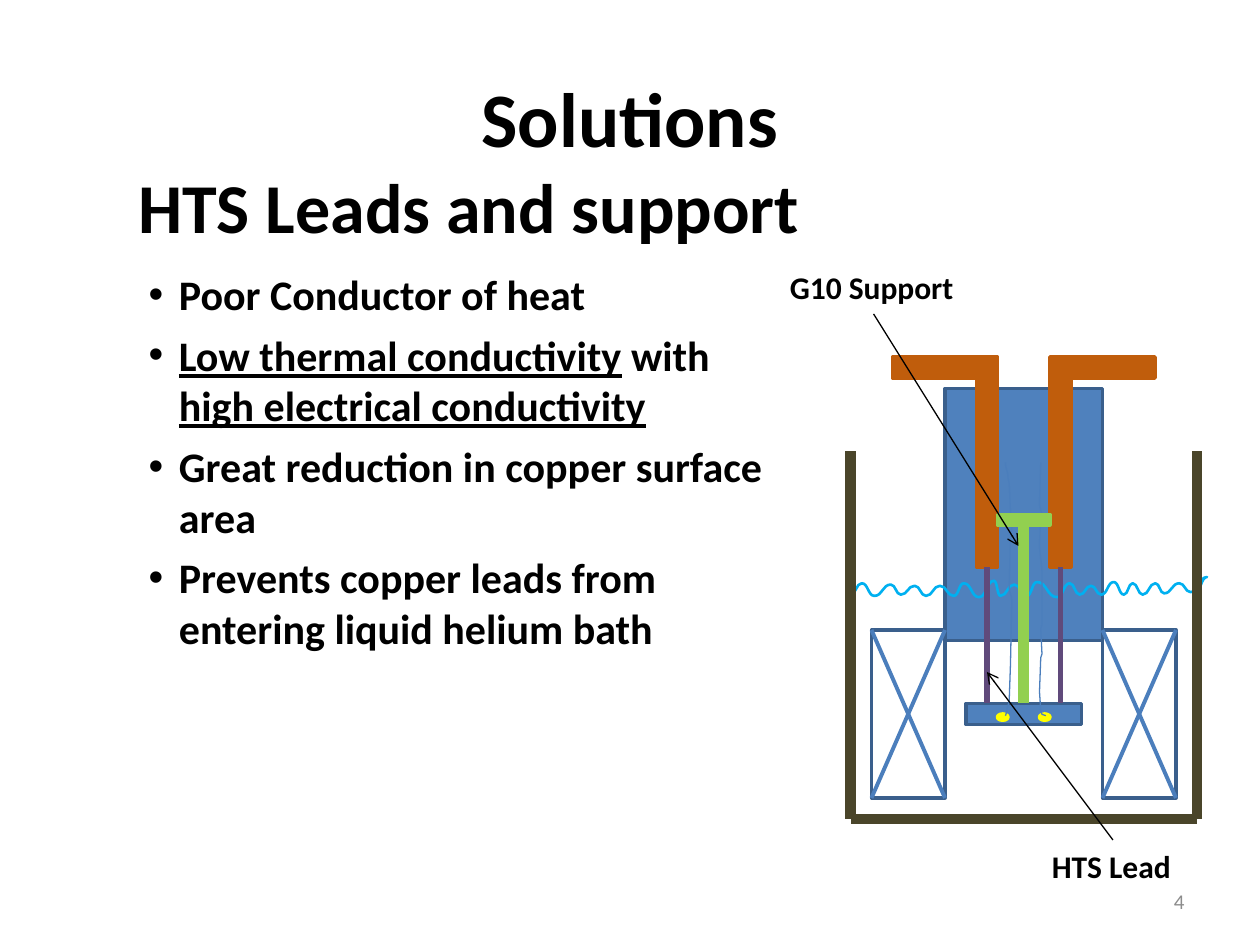
"""Build the Solutions slide: HTS lead bullets beside a cryostat diagram."""
from lxml import etree
from pptx import Presentation
from pptx.dml.color import RGBColor
from pptx.enum.shapes import MSO_CONNECTOR, MSO_SHAPE
from pptx.enum.text import MSO_ANCHOR, MSO_AUTO_SIZE, PP_ALIGN
from pptx.oxml.ns import qn
from pptx.util import Inches, Pt

RECT, OVAL, STRAIGHT = MSO_SHAPE.RECTANGLE, MSO_SHAPE.OVAL, MSO_CONNECTOR.STRAIGHT
CENTER, RIGHT = PP_ALIGN.CENTER, PP_ALIGN.RIGHT
MIDDLE, GROW = MSO_ANCHOR.MIDDLE, MSO_AUTO_SIZE.SHAPE_TO_FIT_TEXT

BLACK = RGBColor(0x00, 0x00, 0x00)
WHITE = RGBColor(0xFF, 0xFF, 0xFF)
GRAY = RGBColor(0x8C, 0x8C, 0x8C)
BLUE = RGBColor(0x4F, 0x81, 0xBD)
EDGE = RGBColor(0x3A, 0x5F, 0x8C)
WIRE = RGBColor(0x4B, 0x7E, 0xBC)
WATER = RGBColor(0x00, 0xB0, 0xF0)
COPPER = RGBColor(0xC0, 0x5D, 0x0C)
YELLOW = RGBColor(0xFF, 0xFF, 0x00)
WALL = RGBColor(0x4A, 0x45, 0x2A)
PURPLE = RGBColor(0x60, 0x4A, 0x7B)
GREEN = RGBColor(0x92, 0xD0, 0x50)

UNIT = Inches(1) // 12

TITLE = "Solutions"
HEADING = "HTS Leads and support"
BULLETS = [
    [("Poor Conductor of heat", False)],
    [("Low thermal conductivity", True), (" with ", False), ("high electrical conductivity", True)],
    [("Great reduction in copper surface area", False)],
    [("Prevents copper leads from entering liquid helium bath", False)],
]
LABELS = [
    ("G10 Support", (6.17, 2.08, 1.53, 0.4)),
    ("HTS Lead", (8.25, 6.67, 1.15, 0.4)),
]
PAGE, PAGE_BOX = "4", (7.17, 6.95, 2.33, 0.4)
CRESTS = [
    (6.75, 4.72), (6.84, 4.63), (6.94, 4.73), (7.07, 4.64), (7.15, 4.72), (7.26, 4.65),
    (7.35, 4.73), (7.46, 4.65), (7.57, 4.73), (7.65, 4.63), (7.77, 4.74), (7.89, 4.61),
    (7.94, 4.73), (8.05, 4.64), (8.15, 4.73), (8.23, 4.62), (8.39, 4.74), (8.49, 4.63),
    (8.57, 4.72), (8.66, 4.65), (8.74, 4.72), (8.84, 4.62), (8.92, 4.72), (8.99, 4.63),
    (9.07, 4.72), (9.17, 4.63), (9.24, 4.71), (9.36, 4.63), (9.45, 4.7), (9.58, 4.58),
    (9.48, 4.71),
]
WIRES = [
    [(7.98, 5.68), (7.99, 5.65), (8.01, 5.55), (8.02, 5.27), (8.03, 4.77), (8.01, 4.66),
     (8.02, 4.23), (8.03, 4.2), (8.02, 4.06), (8.01, 3.84), (8, 3.79), (7.98, 3.67)],
    [(8.3, 5.68), (8.27, 5.67), (8.26, 5.64), (8.25, 5.49), (8.26, 5.22), (8.27, 5.19),
     (8.26, 4.99), (8.27, 4.96), (8.27, 4.57), (8.25, 4.3), (8.26, 4.14), (8.27, 4.11),
     (8.25, 3.99), (8.26, 3.67)],
]
COIL_LEFTS, COIL_TOP, COIL_W, COIL_H = (83, 105), 60, 7, 16
WALL_LEFT, WALL_RIGHT, WALL_TOP, FLOOR = 81, 114, 43, 78
FLOOR_PARTS = [(82, WALL_RIGHT), (84, WALL_LEFT)]
ARROWS = [(106, 80, 94, 64), (83.2, 29.9, 97, 52)]


def write(p, text, size, bold=True, color=BLACK, underline=False):
    r = p.add_run()
    r.text = text
    fmt = {"name": "Calibri", "size": Pt(size), "bold": bold, "underline": underline}
    for key, value in fmt.items():
        setattr(r.font, key, value)
    r.font.color.rgb = color


def place(sp, left, top, width, height):
    box = {"left": left, "top": top, "width": width, "height": height}
    for key, value in box.items():
        setattr(sp, key, Inches(value))


def indent(p, margin, bullet):
    pPr = p._p.get_or_add_pPr()
    pPr.set("marL", str(Inches(margin)))
    pPr.set("indent", str(-Inches(margin)))
    if bullet:
        etree.SubElement(pPr, qn("a:buChar"), char=bullet)
    else:
        etree.SubElement(pPr, qn("a:buNone"))


def add_block(s, left, top, width, height, fill, line, kind=RECT):
    sp = s.shapes.add_shape(kind, *(round(v * UNIT) for v in (left, top, width, height)))
    sp.shadow.inherit = False
    sp.fill.solid()
    sp.fill.fore_color.rgb = fill
    sp.line.color.rgb = line
    sp.line.width = Pt(2)
    return sp


def add_line(s, x1, y1, x2, y2, color, width, arrow=False):
    c = s.shapes.add_connector(STRAIGHT, *(round(v * UNIT) for v in (x1, y1, x2, y2)))
    c.line.color.rgb = color
    c.line.width = Pt(width)
    if arrow:
        etree.SubElement(c.line._get_or_add_ln(), qn("a:tailEnd"), type="arrow")
    etree.SubElement(c._element.spPr, qn("a:effectLst"))
    return c


def bend(sp, upright):
    """Turn each straight segment into an S-curve along the given direction."""
    pts = [(int(pt.get("x")), int(pt.get("y"))) for pt in sp._element.iter(qn("a:pt"))]
    segments = list(sp._element.iter(qn("a:lnTo")))
    for seg, (x1, y1), (x2, y2) in zip(segments, pts, pts[1:]):
        xm, ym = (x1 + x2) // 2, (y1 + y2) // 2
        handles = [(x1, ym), (x2, ym)] if upright else [(xm, y1), (xm, y2)]
        curve = etree.Element(qn("a:cubicBezTo"))
        for x, y in handles + [(x2, y2)]:
            etree.SubElement(curve, qn("a:pt"), x=str(x), y=str(y))
        seg.getparent().replace(seg, curve)


def add_curve(s, points, color, width, upright=False):
    points = [(Inches(x), Inches(y)) for x, y in points]
    builder = s.shapes.build_freeform(*points[0], scale=1.0)
    builder.add_line_segments(points[1:], close=False)
    sp = builder.convert_to_shape()
    bend(sp, upright)
    sp.shadow.inherit = False
    sp.fill.background()
    sp.line.color.rgb = color
    sp.line.width = Pt(width)


def add_text(s):
    title, heading, bullets = list(s.placeholders)[:3]
    place(title, 0.5, 0.3, 9, 1.25)
    title.text_frame.vertical_anchor = MIDDLE
    p = title.text_frame.paragraphs[0]
    p.alignment = CENTER
    write(p, TITLE, 44)

    place(heading, 1, 1.25, 9, 4.95)
    p = heading.text_frame.paragraphs[0]
    indent(p, 0, None)
    write(p, HEADING, 40)

    place(bullets, 1.08, 2.08, 5.25, 3.79)
    tf = bullets.text_frame
    tf.auto_size = GROW
    for i, runs in enumerate(BULLETS):
        p = tf.add_paragraph() if i else tf.paragraphs[0]
        p.space_before = Pt(6)
        indent(p, 0.24, "•")
        for text, underline in runs:
            write(p, text, 24, underline=underline)


def add_labels(s):
    for text, box in LABELS:
        tf = s.shapes.add_textbox(*map(Inches, box)).text_frame
        tf.word_wrap = False
        tf.auto_size = GROW
        write(tf.paragraphs[0], text, 18)
    tf = s.shapes.add_textbox(*map(Inches, PAGE_BOX)).text_frame
    tf.word_wrap = True
    tf.vertical_anchor = MIDDLE
    tf.paragraphs[0].alignment = RIGHT
    write(tf.paragraphs[0], PAGE, 12, False, GRAY)


def add_cryostat(s):
    add_block(s, 90, 37, 15, 24, BLUE, EDGE)
    add_curve(s, CRESTS, WATER, 1.5)
    for left in (85, 100):
        add_block(s, left, 34, 10, 2, COPPER, COPPER)
    leads = [add_block(s, left, 36, 2, 18, COPPER, COPPER) for left in (93, 100)]
    plate = add_block(s, 92, 67, 11, 2, BLUE, EDGE)
    for left in (95, 99):
        add_block(s, left, 68, 1, 0.6, YELLOW, YELLOW, OVAL)
    for wire in WIRES:
        add_curve(s, wire, WIRE, 0.75, upright=True)
    for x in (WALL_LEFT, WALL_RIGHT):
        add_line(s, x, WALL_TOP, x, FLOOR, WALL, 6)
    for x1, x2 in FLOOR_PARTS:
        add_line(s, x1, FLOOR, x2, FLOOR, WALL, 6)
    bottom = COIL_TOP + COIL_H
    for left in COIL_LEFTS:
        add_block(s, left, COIL_TOP, COIL_W, COIL_H, WHITE, EDGE)
        for y1, y2 in ((COIL_TOP, bottom), (bottom, COIL_TOP)):
            add_line(s, left, y1, left + COIL_W, y2, WIRE, 2.25)
    for x, lead in zip((94, 101), leads):
        add_line(s, x, 54, x, 67, PURPLE, 3).begin_connect(lead, 2)
    bar = add_block(s, 95, 49, 5, 1, GREEN, GREEN)
    stem = add_line(s, 97.5, 50, 97.5, 67, GREEN, 6)
    stem.begin_connect(bar, 2)
    stem.end_connect(plate, 0)
    for ends in ARROWS:
        add_line(s, *ends, BLACK, 0.75, arrow=True)


def main():
    prs = Presentation()
    prs.slide_width, prs.slide_height = Inches(10), Inches(7.5)
    s = prs.slides.add_slide(prs.slide_layouts[3])
    add_text(s)
    add_cryostat(s)
    add_labels(s)
    prs.save("out.pptx")


if __name__ == "__main__":
    main()
